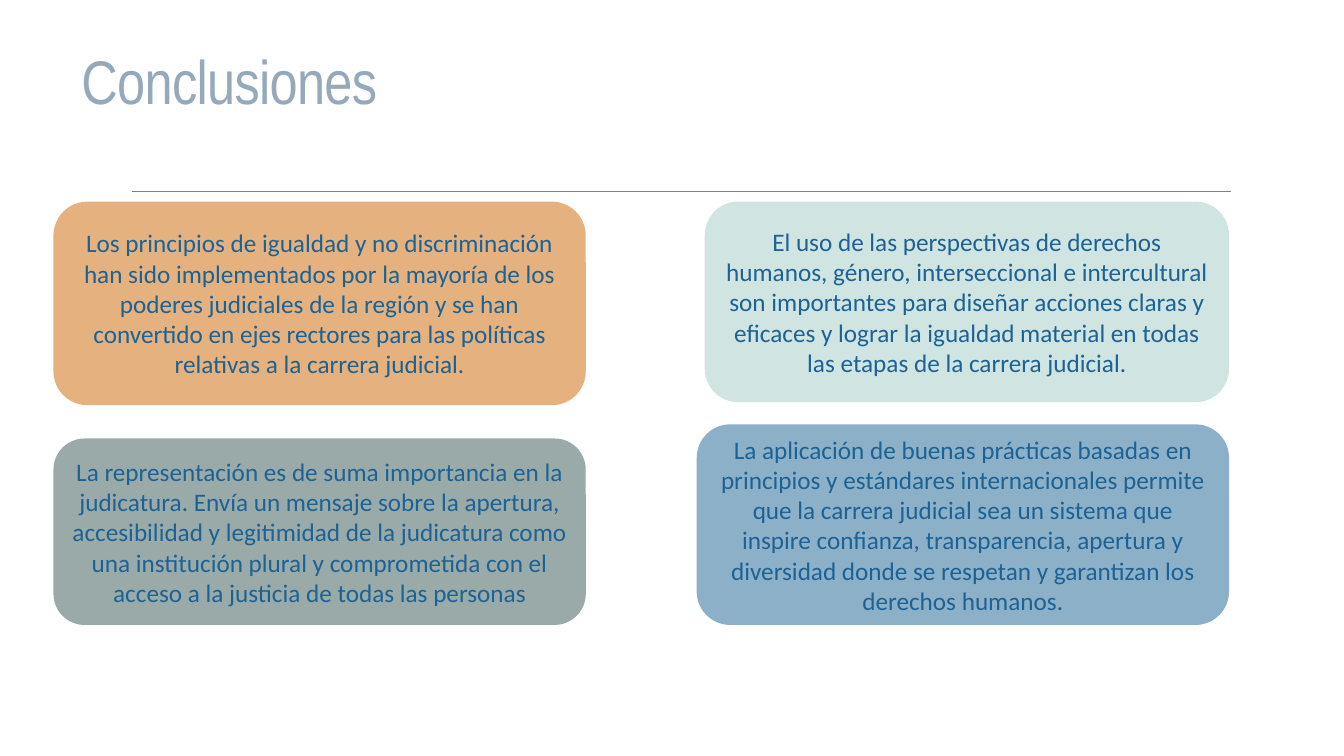
from dataclasses import dataclass

from lxml.etree import SubElement
from pptx import Presentation
from pptx.dml.color import RGBColor
from pptx.enum.shapes import MSO_CONNECTOR, MSO_SHAPE
from pptx.enum.text import MSO_ANCHOR, PP_ALIGN
from pptx.oxml.ns import qn
from pptx.slide import Slide
from pptx.text.text import Font
from pptx.util import Inches, Pt


@dataclass(frozen=True)
class Theme:
    title_color: str = "96A9BA"
    body_color: str = "1D6294"
    rule_color: str = "808080"
    orange: str = "E5B27F"
    mint: str = "A1C8C5"
    green: str = "305250"
    blue: str = "1D6294"
    title_font: str = "Arial Narrow"
    body_font: str = "Calibri"
    title_size: int = 44
    body_size: int = 18


@dataclass(frozen=True)
class Conclusion:
    left: float
    top: float
    width: float
    height: float
    fill: str
    opacity: int
    text: str


THEME = Theme()
CONCLUSIONS = [
    Conclusion(0.53, 2, 5.28, 2.02, THEME.orange, 100,
               "Los principios de igualdad y no discriminación han sido implementados "
               "por la mayoría de los poderes judiciales de la región y se han convertido "
               "en ejes rectores para las políticas relativas a la carrera judicial."),
    Conclusion(6.99, 2, 5.2, 1.99, THEME.mint, 49,
               "El uso de las perspectivas de derechos humanos, género, interseccional e "
               "intercultural son importantes para diseñar acciones claras y eficaces y "
               "lograr la igualdad material en todas las etapas de la carrera judicial."),
    Conclusion(0.53, 4.35, 5.28, 1.85, THEME.green, 49,
               "La representación es de suma importancia en la judicatura. Envía un "
               "mensaje sobre la apertura, accesibilidad y legitimidad de la judicatura "
               "como una institución plural y comprometida con el acceso a la justicia "
               "de todas las personas"),
    Conclusion(6.91, 4.21, 5.28, 1.99, THEME.blue, 50,
               "La aplicación de buenas prácticas basadas en principios y estándares "
               "internacionales permite que la carrera judicial sea un sistema que inspire "
               "confianza, transparencia, apertura y diversidad donde se respetan y "
               "garantizan los derechos humanos."),
]


def format_font(font: Font, name: str, size: int, color: str) -> None:
    for attribute, value in {"name": name, "size": Pt(size)}.items():
        setattr(font, attribute, value)
    font.color.rgb = RGBColor.from_string(color)


def add_title(page: Slide, text: str) -> None:
    box = page.shapes.add_textbox(Inches(0.71), Inches(0), Inches(11), Inches(1.21))
    frame = box.text_frame
    frame.word_wrap = True
    frame.vertical_anchor = MSO_ANCHOR.BOTTOM
    para = frame.paragraphs[0]
    para.line_spacing = 0.85
    span = para.add_run()
    span.text = text
    format_font(span.font, THEME.title_font, THEME.title_size, THEME.title_color)
    span.font._element.set("spc", "-50")


def add_rule(page: Slide) -> None:
    rule = page.shapes.add_connector(
        MSO_CONNECTOR.STRAIGHT, Inches(1.31), Inches(1.9), Inches(12.21), Inches(1.9))
    rule.line.color.rgb = RGBColor.from_string(THEME.rule_color)
    rule.line.width = Pt(0.5)
    SubElement(rule._element.spPr, qn("a:effectLst"))


def add_conclusion(page: Slide, conclusion: Conclusion) -> None:
    box = page.shapes.add_shape(
        MSO_SHAPE.ROUNDED_RECTANGLE, Inches(conclusion.left), Inches(conclusion.top),
        Inches(conclusion.width), Inches(conclusion.height))
    box.shadow.inherit = False
    box.line.fill.background()
    box.fill.solid()
    box.fill.fore_color.rgb = RGBColor.from_string(conclusion.fill)
    if conclusion.opacity < 100:
        color = box._element.spPr.find(qn("a:solidFill"))[0]
        SubElement(color, qn("a:alpha"), val=str(conclusion.opacity * 1000))
    frame = box.text_frame
    frame.word_wrap = True
    frame.vertical_anchor = MSO_ANCHOR.MIDDLE
    para = frame.paragraphs[0]
    para.alignment = PP_ALIGN.CENTER
    span = para.add_run()
    span.text = conclusion.text
    format_font(span.font, THEME.body_font, THEME.body_size, THEME.body_color)


def main() -> None:
    deck = Presentation()
    deck.slide_width, deck.slide_height = Inches(13.33), Inches(7.5)
    page = deck.slides.add_slide(deck.slide_layouts[6])
    add_rule(page)
    add_title(page, "Conclusiones")
    for conclusion in CONCLUSIONS:
        add_conclusion(page, conclusion)
    deck.save("out.pptx")


if __name__ == "__main__":
    main()
